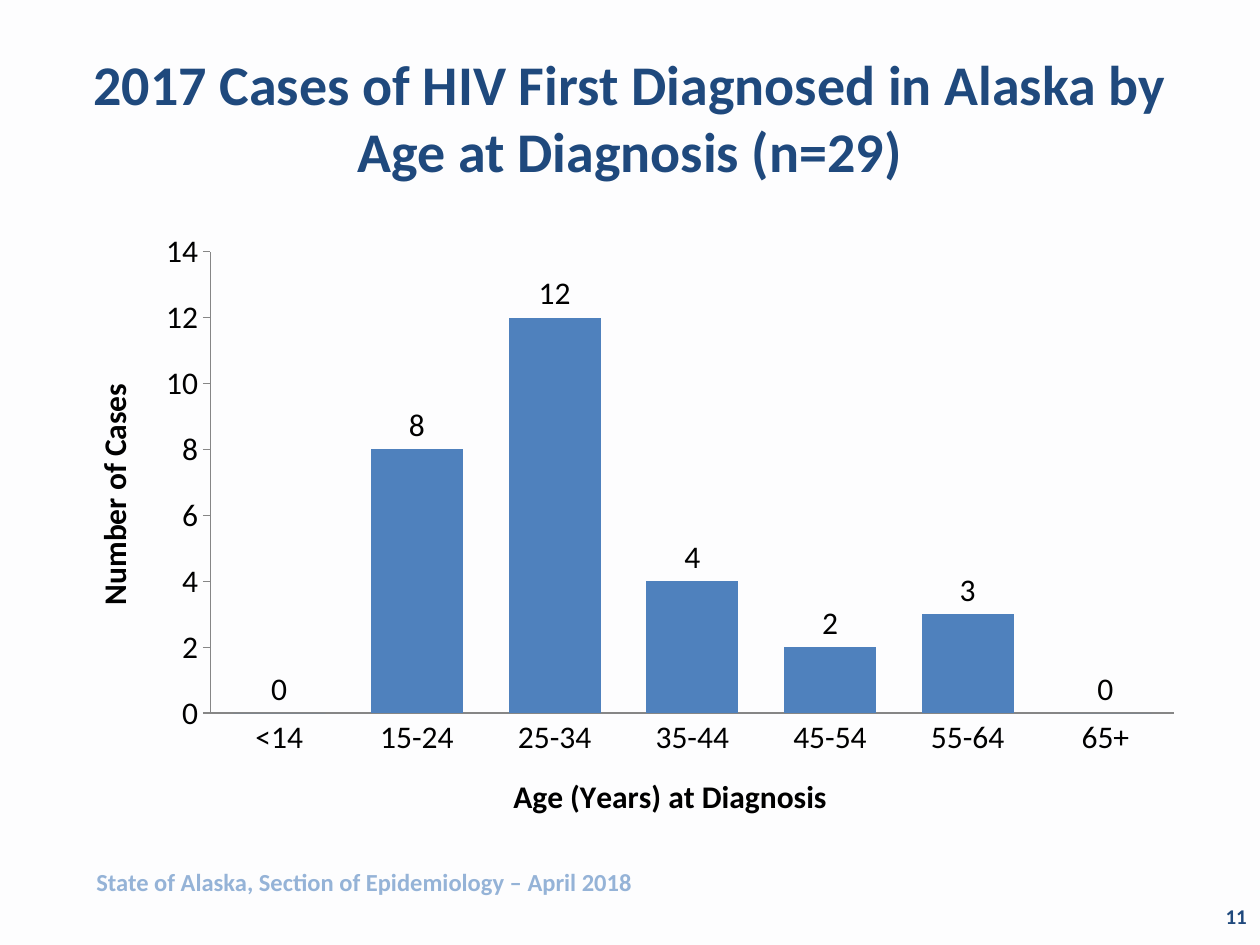
from lxml import etree
from pptx import Presentation
from pptx.chart.data import CategoryChartData
from pptx.dml.color import RGBColor
from pptx.enum.chart import XL_CHART_TYPE, XL_LABEL_POSITION, XL_TICK_MARK
from pptx.enum.text import MSO_ANCHOR, PP_ALIGN
from pptx.oxml import parse_xml
from pptx.oxml.ns import nsdecls, qn
from pptx.util import Pt

COLORS = {
    "background": "FDFDFE",
    "heading": "1F497D",
    "source": "95B3D7",
    "bar": "4F81BD",
    "axis": "868686",
    "text": "000000",
}
FONT = "Calibri"
CASES_BY_AGE = {
    "<14": 0, "15-24": 8, "25-34": 12, "35-44": 4,
    "45-54": 2, "55-64": 3, "65+": 0,
}


class SlideBuilder:
    """Holds the style and the current slide."""

    def __init__(self, prs):
        self.slide = prs.slides.add_slide(prs.slide_layouts[6])
        fill = self.slide.background.fill
        fill.solid()
        fill.fore_color.rgb = self.color("background")

    def color(self, name):
        return RGBColor.from_string(COLORS[name])

    def style(self, font, size, color, bold=False):
        font.name, font.size, font.bold = FONT, Pt(size), bold
        font.color.rgb = self.color(color)

    def text(self, box, words, size, color, align=PP_ALIGN.LEFT, anchor=MSO_ANCHOR.MIDDLE):
        frame = self.slide.shapes.add_textbox(*map(Pt, box)).text_frame
        frame.word_wrap = True
        frame.vertical_anchor = anchor
        line = frame.paragraphs[0]
        line.text = words
        line.alignment = align
        self.style(line.font, size, color, bold=True)

    def axis(self, axis, title, tick):
        axis.has_major_gridlines = False
        axis.major_tick_mark = tick
        axis.minor_tick_mark = XL_TICK_MARK.NONE
        axis.format.line.color.rgb = self.color("axis")
        axis.format.line.width = Pt(0.75)
        self.style(axis.tick_labels.font, 18, "text")
        heading = axis.axis_title.text_frame.paragraphs[0]
        heading.text = title
        self.style(heading.font, 18, "text", bold=True)

    def column_chart(self, box, values, category_title, value_title, plot_area):
        data = CategoryChartData()
        data.categories = list(values)
        data.add_series("Series 1", list(values.values()))
        chart = self.slide.shapes.add_chart(
            XL_CHART_TYPE.COLUMN_CLUSTERED, *map(Pt, box), data).chart
        chart.has_title = False
        chart.has_legend = False
        self.style(chart.font, 18, "text")

        # Axes
        self.axis(chart.category_axis, category_title, XL_TICK_MARK.NONE)
        self.axis(chart.value_axis, value_title, XL_TICK_MARK.OUTSIDE)
        chart.value_axis.minimum_scale = 0
        chart.value_axis.maximum_scale = 14
        chart.value_axis.major_unit = 2

        # Columns and their values
        plot = chart.plots[0]
        plot.gap_width = 50
        plot.vary_by_categories = False
        fill = plot.series[0].format.fill
        fill.solid()
        fill.fore_color.rgb = self.color("bar")
        labels = plot.series[0].data_labels
        labels.show_value = True
        labels.position = XL_LABEL_POSITION.OUTSIDE_END
        self.style(labels.font, 18, "text")

        # Fixed inner plot area, as fractions of the chart
        area = chart.element.find(".//" + qn("c:plotArea"))
        for old in area.findall(qn("c:layout")):
            area.remove(old)
        layout = parse_xml(f"<c:layout {nsdecls('c')}><c:manualLayout/></c:layout>")
        settings = {"layoutTarget": "inner", "xMode": "edge", "yMode": "edge", **plot_area}
        for name, value in settings.items():
            etree.SubElement(layout[0], qn(f"c:{name}")).set("val", str(value))
        area.insert(0, layout)


def main():
    prs = Presentation()
    prs.slide_width, prs.slide_height = Pt(720), Pt(540)
    page = SlideBuilder(prs)

    # Heading
    page.text((36, 21.6, 648, 90),
              "2017 Cases of HIV First Diagnosed in Alaska by Age at Diagnosis (n=29)",
              32, "heading", PP_ALIGN.CENTER)

    # Page number and source
    page.text((551.5, 509, 168, 29), "11", 12, "heading", PP_ALIGN.RIGHT)
    page.text((48, 492, 504, 24.5),
              "State of Alaska, Section of Epidemiology – April 2018",
              14, "source", anchor=MSO_ANCHOR.TOP)

    # Cases by age
    page.column_chart((36, 126, 648, 356.4), CASES_BY_AGE,
                      "Age (Years) at Diagnosis", "Number of Cases",
                      {"x": 0.13, "y": 0.05, "w": 0.85, "h": 0.74})

    prs.save("out.pptx")


if __name__ == "__main__":
    main()
